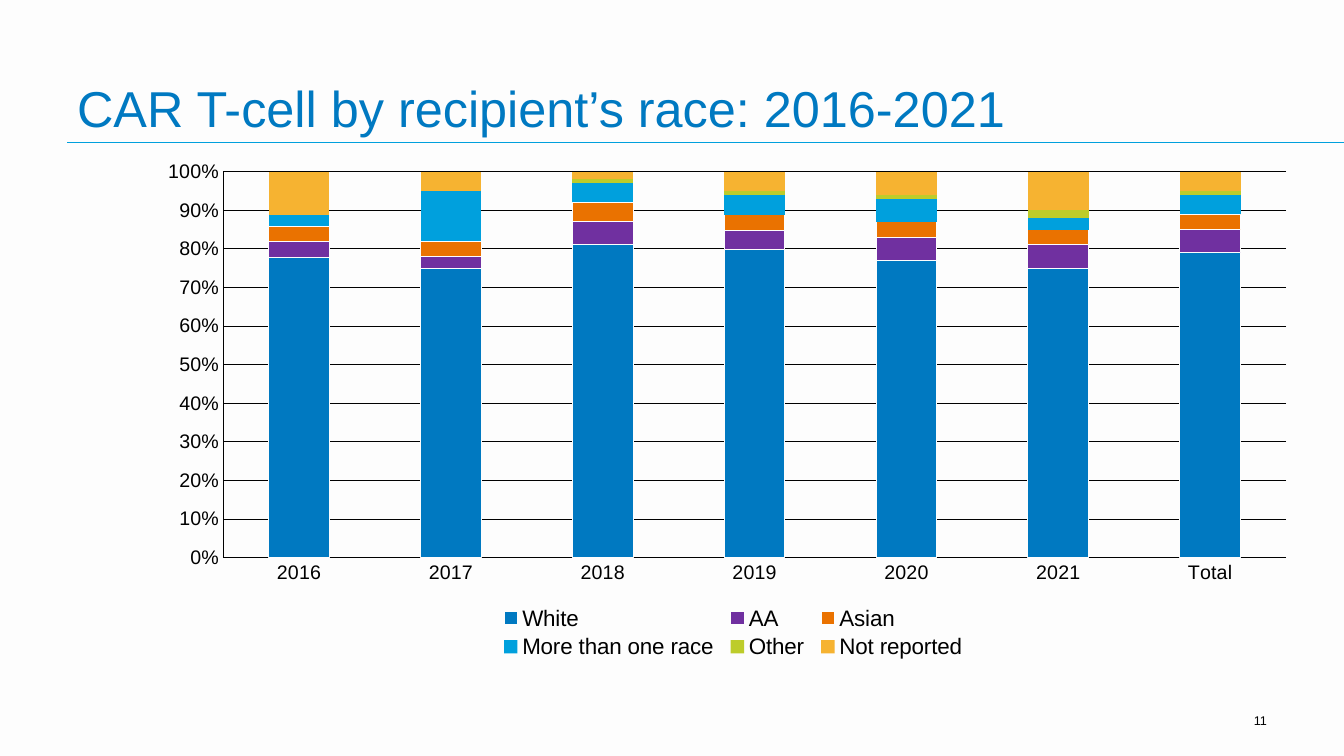
from dataclasses import dataclass
from typing import Any, Optional

from lxml.etree import SubElement
from pptx import Presentation
from pptx.chart.chart import Chart
from pptx.chart.data import CategoryChartData
from pptx.dml.color import RGBColor
from pptx.enum.chart import XL_CHART_TYPE, XL_LEGEND_POSITION, XL_TICK_MARK
from pptx.enum.shapes import MSO_CONNECTOR
from pptx.enum.text import MSO_ANCHOR, PP_ALIGN
from pptx.oxml import parse_xml
from pptx.oxml.ns import nsdecls, qn
from pptx.slide import Slide
from pptx.util import Pt

HUES = {
    "page": "FDFDFD", "ink": "000000", "blue": "0079C1", "purple": "7030A0",
    "orange": "EA7200", "sky": "00A0DD", "lime": "BDCC2A", "gold": "F6B331",
}
YEARS = ["2016", "2017", "2018", "2019", "2020", "2021", "Total"]


@dataclass
class Label:
    text: str
    box: tuple[float, float, float, float]
    size: float
    hue: str
    align: PP_ALIGN
    anchor: MSO_ANCHOR


@dataclass
class Race:
    name: str
    hue: str
    shares: list[int]
    edge: Optional[str] = None


LABELS = [
    Label("CAR T-cell by recipient’s race: 2016-2021", (48, 12, 706, 90),
          36, "blue", PP_ALIGN.LEFT, MSO_ANCHOR.BOTTOM),
    Label("11", (864, 500.5, 48, 28.5), 9, "ink", PP_ALIGN.RIGHT, MSO_ANCHOR.MIDDLE),
]
RACES = [
    Race("White", "blue", [77, 75, 82, 79, 77, 75, 79], "page"),
    Race("AA", "purple", [4, 3, 6, 5, 6, 6, 6], "page"),
    Race("Asian", "orange", [4, 4, 5, 4, 4, 4, 4], "page"),
    Race("More than one race", "sky", [3, 13, 5, 5, 6, 3, 5]),
    Race("Other", "lime", [0, 0, 1, 1, 1, 2, 1]),
    Race("Not reported", "gold", [11, 5, 2, 5, 6, 10, 5]),
]


def rgb(hue: str) -> RGBColor:
    return RGBColor.from_string(HUES[hue])


def apply(item: Any, form: dict[str, Any]) -> None:
    for key, value in form.items():
        setattr(item, key, value)


def style(font: Any, size: float, hue: str = "ink") -> None:
    apply(font, {"name": "Arial", "size": Pt(size), "bold": False})
    font.color.rgb = rgb(hue)


def stroke(line: Any, hue: str) -> None:
    line.color.rgb = rgb(hue)
    line.width = Pt(0.75)


def write(slide: Slide, label: Label) -> None:
    frame = slide.shapes.add_textbox(*map(Pt, label.box)).text_frame
    apply(frame, {"word_wrap": True, "vertical_anchor": label.anchor})
    para = frame.paragraphs[0]
    apply(para, {"text": label.text, "alignment": label.align})
    style(para.runs[0].font, label.size, label.hue)


def place(chart: Chart, tag: str, index: int, form: dict[str, Any]) -> None:
    """Give the plot area or the legend a fixed place, in parts of the chart."""
    node = chart.element.xpath(f".//c:{tag}")[0]
    for old in node.findall(qn("c:layout")):
        node.remove(old)
    layout = parse_xml(f"<c:layout {nsdecls('c')}><c:manualLayout/></c:layout>")
    for key, value in form.items():
        SubElement(layout[0], qn(f"c:{key}")).set("val", str(value))
    node.insert(index, layout)


def draw(slide: Slide) -> None:
    data = CategoryChartData(number_format="0")
    data.categories = YEARS
    for race in RACES:
        data.add_series(race.name, race.shares)
    chart = slide.shapes.add_chart(
        XL_CHART_TYPE.COLUMN_STACKED_100, *map(Pt, (103.7, 108, 831.6, 365.8)), data
    ).chart
    apply(chart, {"has_title": False, "has_legend": True})
    style(chart.font, 10)

    # Columns
    plot = chart.plots[0]
    apply(plot, {"gap_width": 150, "overlap": 100, "vary_by_categories": False})
    for race, bar in zip(RACES, plot.series):
        bar.format.fill.solid()
        bar.format.fill.fore_color.rgb = rgb(race.hue)
        if race.edge:
            stroke(bar.format.line, race.edge)
        else:
            bar.format.line.fill.background()

    # Axes
    for axis in (chart.category_axis, chart.value_axis):
        apply(axis, {"major_tick_mark": XL_TICK_MARK.NONE,
                     "minor_tick_mark": XL_TICK_MARK.NONE})
        style(axis.tick_labels.font, 14)
        stroke(axis.format.line, "ink")
    rise = chart.value_axis
    rise.has_major_gridlines = True
    stroke(rise.major_gridlines.format.line, "ink")
    apply(rise.tick_labels, {"number_format": "0%", "number_format_is_linked": False})

    # Legend and layout
    apply(chart.legend, {"position": XL_LEGEND_POSITION.BOTTOM,
                         "include_in_layout": False})
    style(chart.legend.font, 16)
    edge = {"xMode": "edge", "yMode": "edge"}
    place(chart, "plotArea", 0, {"layoutTarget": "inner", **edge,
                                 "x": 0.067, "y": 0.04, "w": 0.913, "h": 0.754})
    place(chart, "legend", 1, {**edge, "x": 0.3, "y": 0.88, "w": 0.41, "h": 0.12})


def main() -> None:
    deck = Presentation()
    apply(deck, {"slide_width": Pt(960), "slide_height": Pt(540)})
    slide = deck.slides.add_slide(deck.slide_layouts[6])
    slide.background.fill.solid()
    slide.background.fill.fore_color.rgb = rgb("page")

    # Rule under the title
    rule = slide.shapes.add_connector(
        MSO_CONNECTOR.STRAIGHT, *map(Pt, (48, 102, 960, 102)))
    stroke(rule.line, "sky")
    SubElement(rule.element.spPr, qn("a:effectLst"))

    # Title, page number and chart
    for label in LABELS:
        write(slide, label)
    draw(slide)
    deck.save("out.pptx")


if __name__ == "__main__":
    main()
